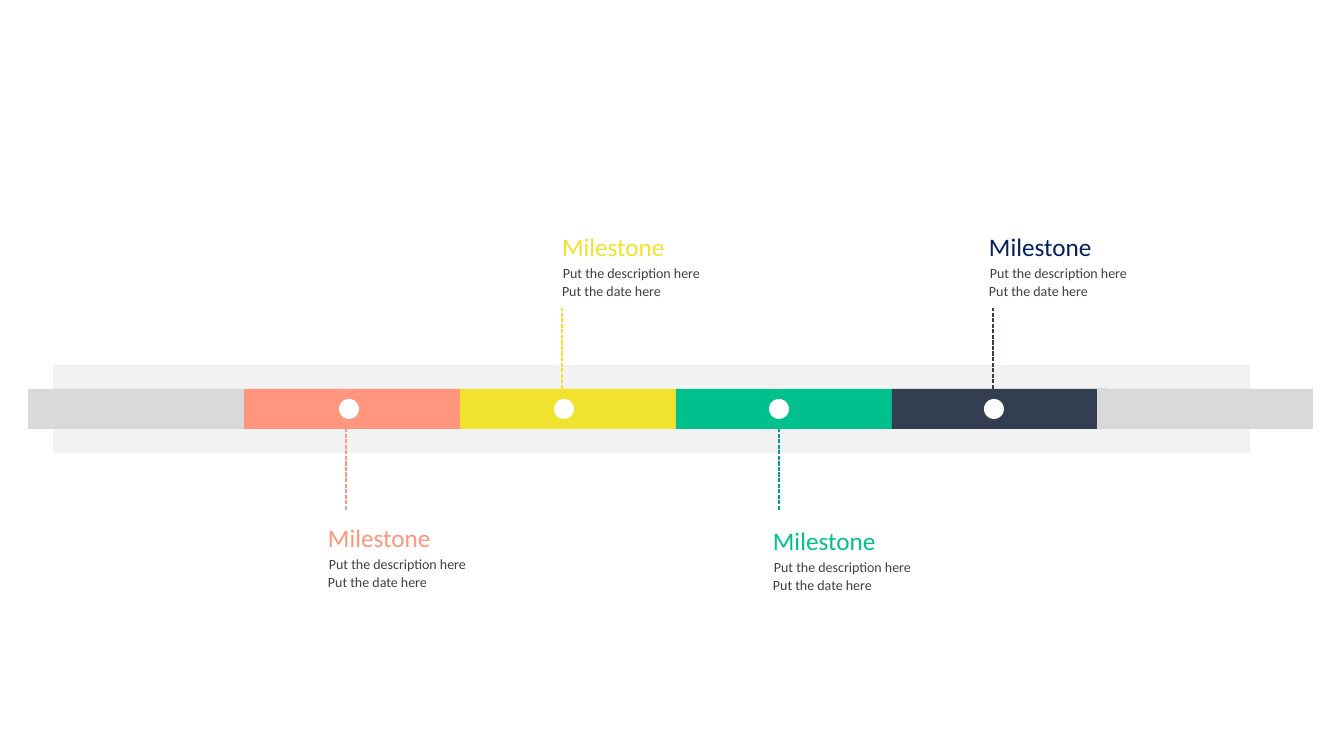
from lxml import etree
from pptx import Presentation
from pptx import util as u
from pptx.dml.color import RGBColor
from pptx.enum import dml, shapes, text
from pptx.oxml.ns import qn

PX = 914400 / 100.8
BAR_LEFT, BAR_TOP, BAR_WIDTH, BAR_HEIGHT = 28, 389, 216, 40
STEM = 81
GREY = "D9D9D9"


def px(*lengths):
    return [u.Emu(round(length * PX)) for length in lengths]


def add_filled(kind, color, *place):
    shape = page.shapes.add_shape(kind, *px(*place))
    shape.shadow.inherit = False
    shape.fill.solid()
    shape.fill.fore_color.rgb = RGBColor.from_string(color)
    shape.line.fill.background()


deck = Presentation()
deck.slide_width, deck.slide_height = px(1344, 756)
page = deck.slides.add_slide(deck.slide_layouts[6])

# bar colour, stem colour, title colour, stem x, label left, label top, above the bar
milestones = [
    ("FF967D", "FF967D", "FF967D", 346, 328, 522, False),
    ("F0E22E", "F0E22E", "F0E22E", 562, 562, 231, True),
    ("00C08E", "009999", "00C08E", 779, 773, 525, False),
    ("333F50", "333F50", "002060", 993, 989, 231, True),
]

# Timeline: backdrop, coloured bars, grey ends, dots
rectangle = shapes.MSO_SHAPE.RECTANGLE
add_filled(rectangle, "F2F2F2", 53, 365, 1197, 88)
bars = [(BAR_LEFT + BAR_WIDTH * (i + 1), m[0]) for i, m in enumerate(milestones)]
for left, color in bars + [(1097, GREY), (BAR_LEFT, GREY)]:
    add_filled(rectangle, color, left, BAR_TOP, BAR_WIDTH, BAR_HEIGHT)
for i in range(len(milestones)):
    add_filled(shapes.MSO_SHAPE.OVAL, "FFFFFF", 339 + 215 * i, 399, 20, 20)

# Dashed stems
for _, color, _, x, _, _, above in milestones:
    near = BAR_TOP if above else BAR_TOP + BAR_HEIGHT
    start, end = (near, near - STEM) if above else (near + STEM, near)
    stem = page.shapes.add_connector(shapes.MSO_CONNECTOR.STRAIGHT, *px(x, start, x, end))
    stem.line.color.rgb = RGBColor.from_string(color)
    stem.line.width = u.Pt(1)
    stem.line.dash_style = dml.MSO_LINE.SQUARE_DOT
    etree.SubElement(stem._element.spPr, qn("a:effectLst"))

# Labels: wording, size, colour, offset from the label corner, width, height
for _, _, title_color, _, left, top, _ in milestones:
    label = page.shapes.add_group_shape()
    for wording, size, color, dx, dy, width, height in [
        ("Milestone", 18, title_color, 0, 0, 113, 30),
        ("Put the description here", 10, "404040", 1, 34, 177, 17),
        ("Put the date here", 10, "404040", 0, 52, 128, 30),
    ]:
        box = label.shapes.add_textbox(*px(left + dx, top + dy, width, height))
        frame = box.text_frame
        frame.word_wrap = True
        frame.auto_size = text.MSO_AUTO_SIZE.NONE
        frame.margin_left = frame.margin_right = frame.margin_top = frame.margin_bottom = 0
        span = frame.paragraphs[0].add_run()
        span.text = wording
        span.font.name = "Calibri"
        span.font.size = u.Pt(size)
        span.font.color.rgb = RGBColor.from_string(color)

deck.save("out.pptx")
